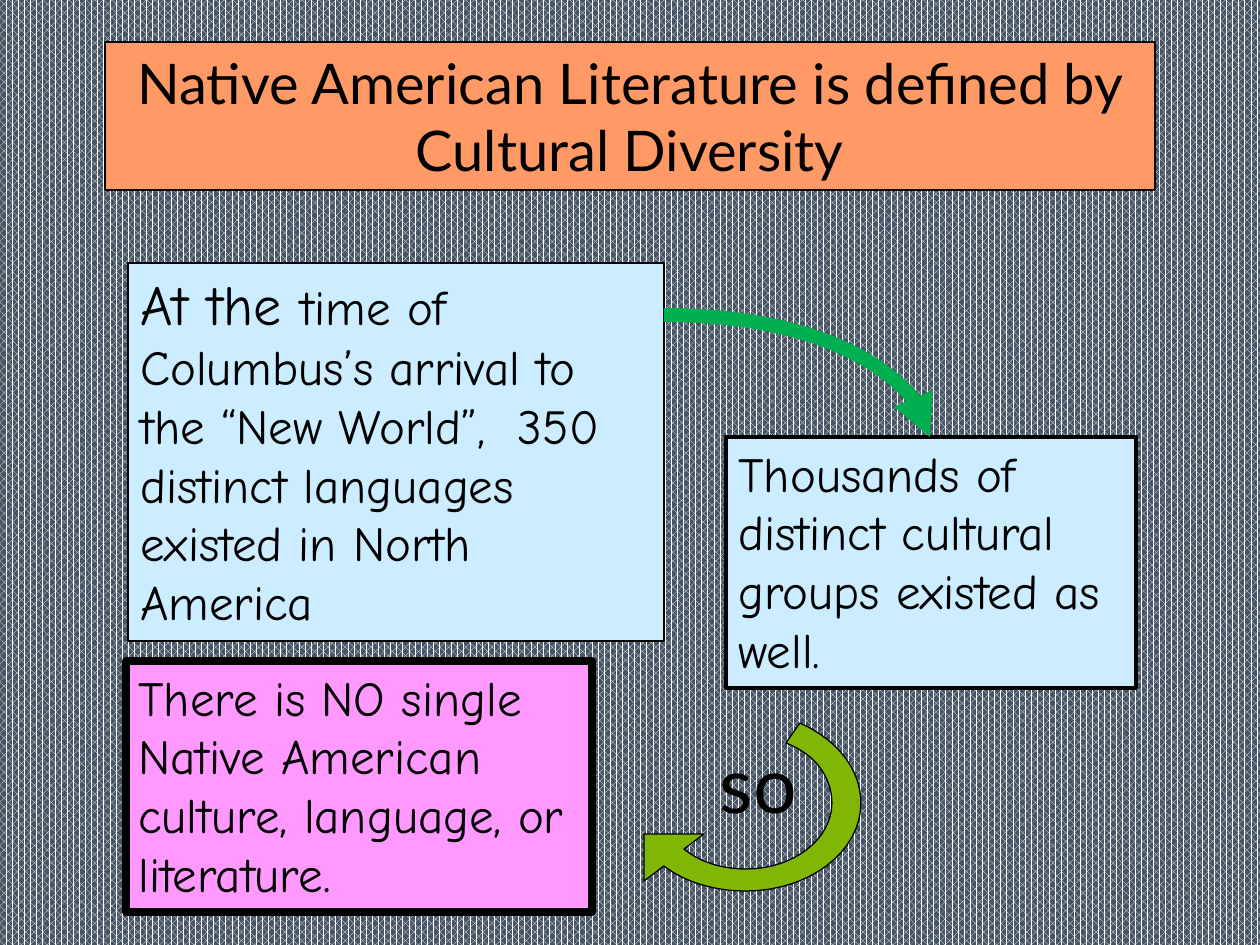
from lxml import etree
from pptx import Presentation
from pptx import util as u
from pptx.dml.color import RGBColor
from pptx.enum import dml, shapes, text
from pptx.oxml.ns import qn

PX_PER_INCH = 126


def px(length):
    return u.Emu(round(length * 914400 / PX_PER_INCH))


def color(value):
    return RGBColor.from_string(value)


def bezier(start, first, second, end, steps=16):
    """Points along a cubic curve, without its start."""
    for step in range(1, steps + 1):
        t = step / steps
        s = 1 - t
        yield tuple(s**3 * a + 3 * s * s * t * b + 3 * s * t * t * c + t**3 * d
                    for a, b, c, d in zip(start, first, second, end))


class SlideBuilder:
    ink = "000000"
    heading_font = "Lato"
    body_font = "Comic Neue"

    def __init__(self, slide):
        self.slide = slide

    def background(self, front, back):
        fill = self.slide.background.fill
        fill.patterned()
        fill.pattern = dml.MSO_PATTERN.PERCENT_70
        fill.fore_color.rgb = color(front)
        fill.back_color.rgb = color(back)

    def paint(self, shape, fill, line_width):
        shape.fill.solid()
        shape.fill.fore_color.rgb = color(fill)
        shape.line.color.rgb = color(self.ink)
        shape.line.width = u.Pt(line_width)

    def add_text(self, shape, runs, font, align):
        frame = shape.text_frame
        frame.word_wrap = True
        frame.auto_size = text.MSO_AUTO_SIZE.NONE
        frame.vertical_anchor = text.MSO_ANCHOR.TOP
        paragraph = frame.paragraphs[0]
        paragraph.alignment = align
        for words, size in runs:
            run = paragraph.add_run()
            run.text = words
            run.font.name = font
            run.font.size = u.Pt(size)
            run.font.color.rgb = color(self.ink)

    def title(self, box, words, size, fill, line_width):
        shape = self.slide.shapes.title
        shape.left, shape.top, shape.width, shape.height = map(px, box)
        self.paint(shape, fill, line_width)
        self.add_text(shape, [(words, size)], self.heading_font,
                      text.PP_ALIGN.CENTER)

    def panel(self, box, runs, fill, line_width):
        shape = self.slide.shapes.add_shape(
            shapes.MSO_SHAPE.RECTANGLE, *map(px, box))
        shape.shadow.inherit = False
        self.paint(shape, fill, line_width)
        self.add_text(shape, runs, self.body_font, text.PP_ALIGN.LEFT)

    def label(self, box, words, size):
        shape = self.slide.shapes.add_textbox(*map(px, box))
        self.add_text(shape, [(words, size)], self.heading_font,
                      text.PP_ALIGN.CENTER)

    def curved_arrow(self, start, end, line_color, width):
        connector = self.slide.shapes.add_connector(
            shapes.MSO_CONNECTOR.CURVE, *map(px, start + end))
        connector.line.color.rgb = color(line_color)
        connector.line.width = u.Pt(width)
        # One bend, an arrowhead and no shadow
        properties = connector._element.spPr
        properties.find(qn("a:prstGeom")).set("prst", "curvedConnector2")
        line = properties.find(qn("a:ln"))
        etree.SubElement(line, qn("a:tailEnd"), type="triangle")
        etree.SubElement(properties, qn("a:effectLst"))

    def outline(self, start, segments, fill, line_width):
        """A segment is one point (line) or three points (curve)."""
        points = [start]
        for segment in segments:
            if len(segment) == 3:
                points.extend(bezier(points[-1], *segment))
            else:
                points.extend(segment)
        builder = self.slide.shapes.build_freeform(*map(px, start), scale=1.0)
        builder.add_line_segments(
            [tuple(map(px, point)) for point in points[1:]], close=True)
        shape = builder.convert_to_shape()
        shape.shadow.inherit = False
        self.paint(shape, fill, line_width)


def main():
    presentation = Presentation()
    presentation.slide_width, presentation.slide_height = px(1260), px(945)
    slide = presentation.slides.add_slide(presentation.slide_layouts[5])
    builder = SlideBuilder(slide)
    builder.background("FFFFFF", "465466")

    # Title
    builder.title((105, 42, 1050, 148),
                  "Native American Literature is defined by Cultural Diversity",
                  32, "FF9966", 1)

    # Two facts and the conclusion
    builder.panel((128, 263, 536, 378),
                  [("At the ", 32),
                   ("time of Columbus’s arrival to the “New World”,  350 distinct "
                    "languages existed in North America", 28)],
                  "CCECFF", 1.5)
    builder.panel((726, 437, 410, 251),
                  [("Thousands of distinct cultural groups existed as well.", 28)],
                  "CCECFF", 2.25)
    builder.panel((126, 661, 466, 251),
                  [("There is NO single Native American culture, language, "
                    "or literature.", 28)],
                  "FF99FF", 4.5)

    # Arrow from the first fact to the second
    builder.curved_arrow((664, 315), (930, 437), "00B050", 8)

    # Round arrow to the conclusion: inner edge, outer edge, head
    builder.outline((684, 849), [
        [(700, 862), (722, 869), (746, 869)],
        [(794, 869), (832, 839), (832, 803)],
        [(832, 777), (815, 754), (786, 743)],
        [(800, 723)],
        [(838, 740), (861, 770), (861, 803)],
        [(861, 852), (809, 891), (746, 891)],
        [(714, 891), (685, 882), (664, 866)],
        [(644, 881)], [(644, 834)], [(704, 834)],
    ], "80B606", 0.75)
    builder.label((703, 730, 111, 106), "so", 44)

    presentation.save("out.pptx")


if __name__ == "__main__":
    main()
